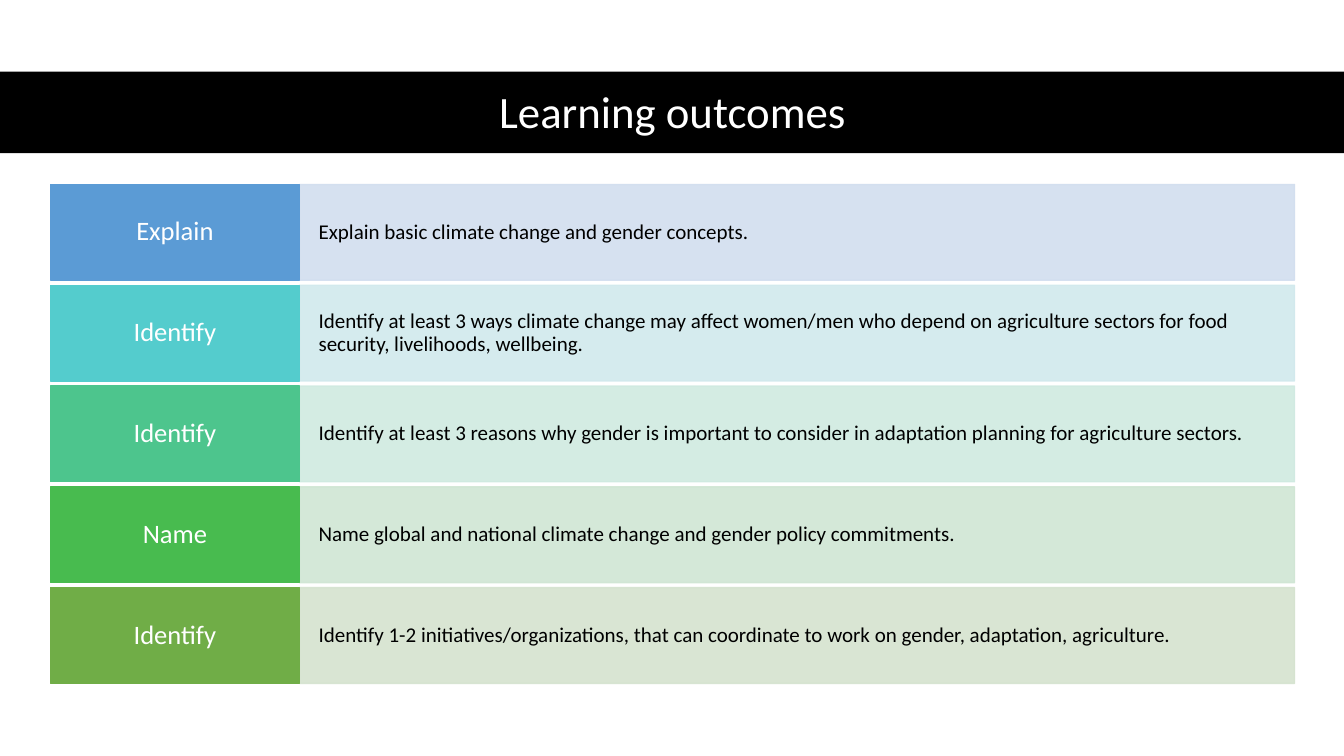
from lxml.etree import SubElement
from pptx import Presentation
from pptx.dml.color import RGBColor
from pptx.enum.shapes import MSO_SHAPE
from pptx.enum.text import MSO_ANCHOR, MSO_AUTO_SIZE, PP_ALIGN
from pptx.oxml.ns import qn
from pptx.util import Inches, Pt

BLACK = RGBColor(0, 0, 0)
WHITE = RGBColor(255, 255, 255)
FONT = "Calibri"
TITLE = "Learning outcomes"
ROWS = [
    ("Explain", "Explain basic climate change and gender concepts.",
     RGBColor(0x5B, 0x9B, 0xD5), RGBColor(0xD2, 0xDE, 0xEF)),
    ("Identify", "Identify at least 3 ways climate change may affect women/men who depend "
     "on agriculture sectors for food security, livelihoods, wellbeing.",
     RGBColor(0x54, 0xCC, 0xCD), RGBColor(0xD1, 0xE9, 0xED)),
    ("Identify", "Identify at least 3 reasons why gender is important to consider in "
     "adaptation planning for agriculture sectors.",
     RGBColor(0x4D, 0xC5, 0x8D), RGBColor(0xD0, 0xEA, 0xE1)),
    ("Name", "Name global and national climate change and gender policy commitments.",
     RGBColor(0x48, 0xBB, 0x4F), RGBColor(0xD0, 0xE6, 0xD4)),
    ("Identify", "Identify 1-2 initiatives/organizations, that can coordinate to work on "
     "gender, adaptation, agriculture.",
     RGBColor(0x70, 0xAD, 0x47), RGBColor(0xD5, 0xE3, 0xCF)),
]
WIDTH = 13.33
LEFT, TOP = 0.5, 1.83
VERB_W, GOAL_W = 2.47, 9.87
ROW_H, GAP = 0.95, 0.05


def add_rect(slide, left, top, width, height, color):
    rect = slide.shapes.add_shape(
        MSO_SHAPE.RECTANGLE, Inches(left), Inches(top), Inches(width), Inches(height))
    rect.shadow.inherit = False
    rect.fill.solid()
    rect.fill.fore_color.rgb = color
    rect.line.color.rgb = color
    rect.line.width = Pt(1)
    return rect


def fade(rect, percent):
    for color in rect._element.spPr.iter(qn("a:srgbClr")):
        SubElement(color, qn("a:alpha")).set("val", str(percent * 1000))


def add_text(shape, text, size, color, align):
    frame = shape.text_frame
    frame.word_wrap = True
    frame.auto_size = MSO_AUTO_SIZE.NONE
    frame.vertical_anchor = MSO_ANCHOR.MIDDLE
    para = frame.paragraphs[0]
    para.alignment = align
    para.line_spacing = 0.9
    run = para.add_run()
    run.text = text
    run.font.name = FONT
    run.font.size = Pt(size)
    run.font.color.rgb = color


def set_inset(shape, side, end):
    frame = shape.text_frame
    frame.margin_left = frame.margin_right = Inches(side)
    frame.margin_top = frame.margin_bottom = Inches(end)


def main():
    deck = Presentation()
    deck.slide_width, deck.slide_height = Inches(WIDTH), Inches(7.5)
    slide = deck.slides.add_slide(deck.slide_layouts[5])

    band = add_rect(slide, 0, 0.71, WIDTH, 0.81, BLACK)
    band.line.fill.background()
    title = slide.shapes.title
    band._element.addnext(title._element)
    title.left, title.top = Inches(0.92), Inches(0.74)
    title.width, title.height = Inches(11.5), Inches(0.78)
    add_text(title, TITLE, 32, WHITE, PP_ALIGN.CENTER)

    for index, (verb, goal, dark, light) in enumerate(ROWS):
        top = TOP + index * (ROW_H + GAP)
        panel = add_rect(slide, LEFT + VERB_W, top, GOAL_W, ROW_H, light)
        fade(panel, 90)
        set_inset(panel, 0.19, 0.24)
        add_text(panel, goal, 15, BLACK, PP_ALIGN.LEFT)
        label = add_rect(slide, LEFT, top, VERB_W, ROW_H, dark)
        set_inset(label, 0.13, 0.09)
        add_text(label, verb, 19, WHITE, PP_ALIGN.CENTER)

    deck.save("out.pptx")


if __name__ == "__main__":
    main()
